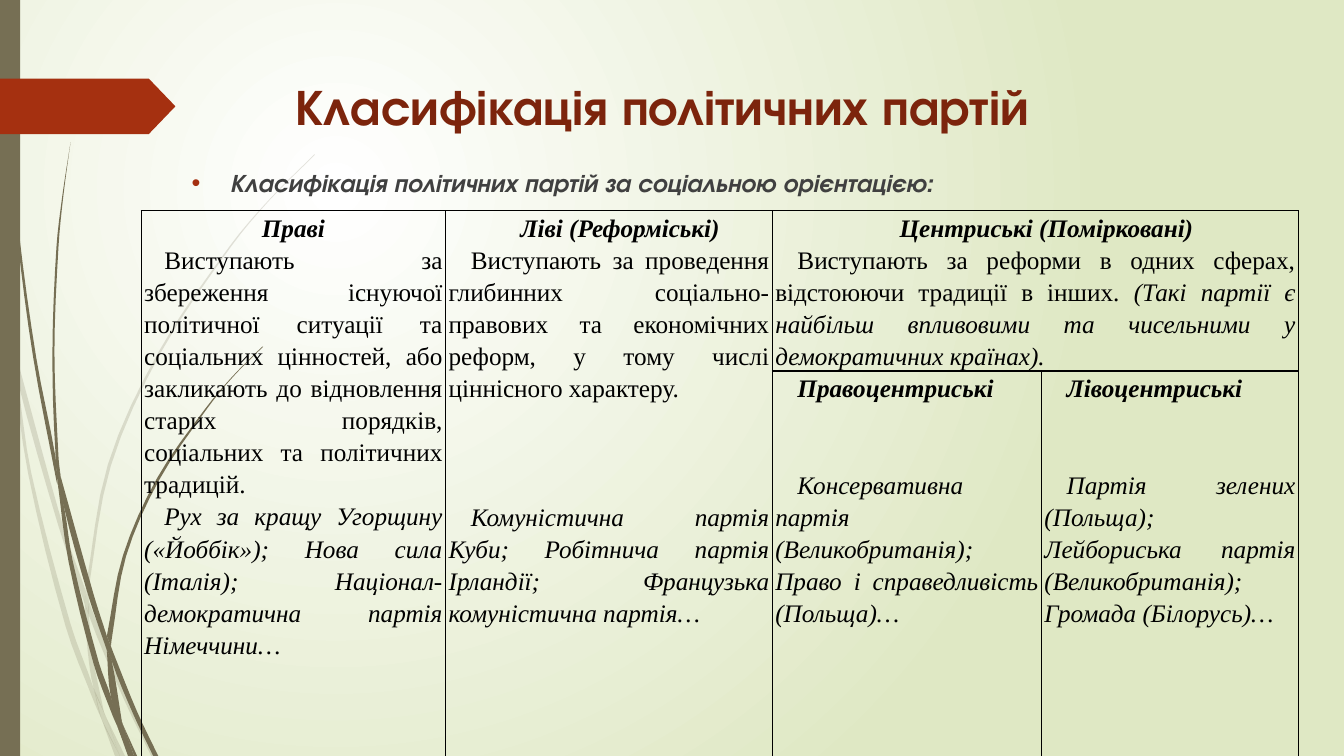
from math import dist
from pptx import Presentation
from pptx.dml.color import RGBColor
from pptx.enum.shapes import MSO_SHAPE as Shape
from pptx.enum.text import MSO_ANCHOR as Anchor, MSO_AUTO_SIZE as AutoSize, PP_ALIGN as Align
from pptx.oxml import parse_xml
from pptx.oxml.ns import nsdecls, qn
from pptx.util import Inches, Pt

COLORS = {"stem": "766F54", "tag": "A53010", "title": "7C240C", "body": "404040",
          "table": "000000", "glow": "FFFFFF", "edge": "DFE8C4"}
HEADING_FONT, TABLE_FONT = "TeX Gyre Adventor", "Times New Roman"

# Content
TITLE = "Класифікація політичних партій"
SUBTITLE = "Класифікація політичних партій за соціальною орієнтацією:"
HEAD = {"bold": True, "italic": True}
PLAIN = {"bold": False, "italic": False}
EXAMPLE = {"bold": False, "italic": True}
LINE = 23  # points in one line of table text

# (row, column, last row, last column): paragraphs of (align, indent, space before, runs)
CELLS = {
    (0, 0, 1, 0): [
        (Align.CENTER, 0, 0, [("Праві", HEAD)]),
        (Align.JUSTIFY, 0.2, 0, [("Виступають за збереження існуючої політичної ситуації та соціальних цінностей, "
                                  "або закликають до відновлення старих порядків, "
                                  "соціальних та політичних традицій.", PLAIN)]),
        (Align.JUSTIFY, 0.2, 0, [("Рух за кращу Угорщину («Йоббік»); Нова сила (Італія); "
                                  "Націонал-демократична партія Німеччини…", EXAMPLE)])],
    (0, 1, 1, 1): [
        (Align.CENTER, 0.22, 0, [("Ліві (Реформіські)", HEAD)]),
        (Align.JUSTIFY, 0.22, 0, [("Виступають за проведення глибинних соціально-правових та "
                                   "економічних реформ, у тому числі ціннісного характеру.", PLAIN)]),
        (Align.JUSTIFY, 0.22, 3 * LINE, [("Комуністична партія Куби; Робітнича партія Ірландії; "
                                          "Французька комуністична партія…", EXAMPLE)])],
    (0, 2, 0, 3): [
        (Align.CENTER, 0.22, 0, [("Центриські (Помірковані)", HEAD)]),
        (Align.JUSTIFY, 0.22, 0, [
            ("Виступають за реформи в одних сферах, відстоюючи традиції в інших. ", PLAIN),
            ("(Такі партії є найбільш впливовими та чисельними у демократичних країнах).", EXAMPLE)])],
    (1, 2, 1, 2): [
        (Align.JUSTIFY, 0.22, 0, [("Правоцентриські", HEAD)]),
        (Align.JUSTIFY, 0.22, 2 * LINE, [("Консервативна партія (Великобританія); "
                                          "Право і справедливість (Польща)…", EXAMPLE)])],
    (1, 3, 1, 3): [
        (Align.JUSTIFY, 0.22, 0, [("Лівоцентриські", HEAD)]),
        (Align.JUSTIFY, 0.22, 2 * LINE, [("Партія зелених (Польща); Лейбориська партія "
                                          "(Великобританія); Громада (Білорусь)…", EXAMPLE)])],
}
COLUMN_WIDTHS = [3.02, 3.24, 2.67, 2.55]
ROW_HEIGHTS = [1.37, 3.47]

# Grass blades: left edge and right edge, both from tip to root
FAINT_BLADES = [
    ([(0, 2.99), (0.1, 3.44), (0.11, 3.5)], [(0, 2.82), (0.09, 3.22), (0.11, 3.5)]),
    ([(0.14, 3.45), (0.17, 3.76), (0.58, 5.22), (0.84, 5.99)], [(0.14, 3.45), (0.62, 5.2), (0.85, 5.86)]),
    ([(0.88, 5.96), (0.88, 6.1), (1.23, 6.94), (1.5, 7.5)], [(0.88, 5.96), (0.92, 6.07), (1.27, 6.92), (1.55, 7.5)]),
    ([(1.05, 7.11), (1.19, 7.5)], [(1.05, 7.11), (1.24, 7.5)]),
    ([(0.11, 3.5), (0.28, 4.7), (0.65, 6.21), (0.92, 6.93), (1.01, 7.14)],
     [(0.11, 3.5), (0.17, 3.76), (0.31, 4.69), (0.7, 6.19), (0.93, 6.83), (0.99, 7.07)]),
    ([(0.84, 5.99), (0.87, 6.46), (0.93, 6.83), (1.05, 7.11)], [(0.84, 5.99), (0.88, 6.1), (0.91, 6.46), (1.03, 7.06)]),
    ([(3.12, 1.53), (2.68, 1.97), (2.28, 2.44), (1.58, 3.48), (1.07, 4.61), (0.85, 5.84)],
     [(3.12, 1.54), (2.68, 1.98), (2.29, 2.45), (1.6, 3.49), (1.1, 4.62), (0.88, 5.84), (0.88, 5.96)]),
    ([(1.01, 7.14), (1.14, 7.5)], [(1.01, 7.14), (1.19, 7.5)]),
    ([(0.85, 5.86), (0.84, 5.99)], [(0.88, 5.96), (0.88, 6.1)]),
    ([(0.93, 6.83), (1.01, 7.14), (1.19, 7.5)], [(0.93, 6.83), (1.05, 7.11), (1.19, 7.5)]),
]
DARK_BLADES = [
    ([(0.03, 0), (0.07, 1.1), (0.17, 2.33), (0.33, 3.55), (0.56, 4.77)],
     [(0.04, 0), (0.08, 1.09), (0.19, 2.32), (0.36, 3.55), (0.55, 4.53), (0.57, 4.81)]),
    ([(0.6, 4.72), (0.64, 5.05), (0.88, 5.92), (1.06, 6.45)], [(0.6, 4.72), (0.93, 5.9), (1.06, 6.31)]),
    ([(1.1, 6.41), (1.11, 6.56), (1.32, 7.08), (1.52, 7.5)], [(1.1, 6.41), (1.13, 6.49), (1.36, 7.06), (1.57, 7.5)]),
    ([(0.57, 4.77), (0.68, 5.57), (0.93, 6.59), (1.11, 7.08), (1.17, 7.22)],
     [(0.57, 4.77), (0.64, 5.05), (0.72, 5.56), (0.98, 6.57), (1.1, 6.91), (1.16, 7.17)]),
    ([(0.7, 1.41), (0.62, 1.93), (0.56, 2.45), (0.52, 3.49), (0.55, 4.49), (0.6, 4.72)],
     [(0.7, 1.41), (0.63, 1.93), (0.58, 2.45), (0.54, 3.49), (0.58, 4.53), (0.6, 4.72)]),
    ([(1.22, 7.19), (1.33, 7.5)], [(1.22, 7.19), (1.36, 7.5)]),
    ([(0.55, 4.49), (0.57, 4.77), (0.64, 5.05)], [(0.55, 4.49), (0.6, 4.72), (0.64, 5.05)]),
    ([(2.6, 3.44), (2.31, 3.73), (2.04, 4.05), (1.56, 4.74), (1.22, 5.51), (1.06, 6.31)],
     [(2.61, 3.44), (2.31, 3.74), (2.05, 4.06), (1.58, 4.76), (1.25, 5.52), (1.11, 6.33), (1.1, 6.41)]),
    ([(1.17, 7.22), (1.27, 7.5)], [(1.17, 7.22), (1.31, 7.5)]),
    ([(1.06, 6.45), (1.1, 6.91), (1.22, 7.19)], [(1.06, 6.45), (1.11, 6.56), (1.21, 7.16)]),
    ([(1.06, 6.31), (1.06, 6.45)], [(1.1, 6.41), (1.11, 6.56)]),
    ([(1.1, 6.91), (1.17, 7.22), (1.3, 7.5)], [(1.1, 6.91), (1.22, 7.19), (1.33, 7.5)]),
]


def smooth(points, steps=4):
    """Trace a soft curve through the points."""
    ends = [points[0], *points, points[-1]]
    tangents = [[(b - a) / dist(p, q) for a, b in zip(p, q)] for p, q in zip(ends, ends[2:])]
    curve = [points[0]]
    for start, end, leave, arrive in zip(points, points[1:], tangents, tangents[1:]):
        for t in (step / steps for step in range(1, steps + 1)):
            curve.append([a + (b - a) * (3 - 2 * t) * t**2
                          + dist(start, end) * t * (1 - t) * ((1 - t) * u - t * v)
                          for a, b, u, v in zip(start, end, leave, arrive)])
    return curve


def paint(shape, color):
    shape.shadow.inherit = False
    shape.fill.solid()
    shape.fill.fore_color.rgb = RGBColor.from_string(COLORS[color])
    shape.line.fill.background()


def add_blade(shapes, left, right, alpha):
    outline = [(Inches(x), Inches(y)) for x, y in smooth(left) + smooth(right)[::-1]]
    builder = shapes.build_freeform(*outline[0])
    builder.add_line_segments(outline[1:], close=True)
    blade = builder.convert_to_shape()
    paint(blade, "stem")
    color = blade._element.spPr.find(qn("a:solidFill"))[0]
    color.append(parse_xml(f'<a:alpha {nsdecls("a")} val="{alpha * 1000}"/>'))


def add_run(paragraph, text, color, **formats):
    run = paragraph.add_run()
    run.text = text
    for name, value in formats.items():
        setattr(run.font, name, value)
    run.font.color.rgb = RGBColor.from_string(COLORS[color])


def place(placeholder, **box):
    for name, value in box.items():
        setattr(placeholder, name, Inches(value))
    frame = placeholder.text_frame
    frame.auto_size, frame.vertical_anchor = AutoSize.NONE, Anchor.TOP
    paragraph = frame.paragraphs[0]
    paragraph.alignment, paragraph.space_before = Align.LEFT, Pt(0)
    return paragraph


presentation = Presentation()
presentation.slide_width, presentation.slide_height = Inches(13.33), Inches(7.5)
slide = presentation.slides.add_slide(presentation.slide_layouts[1])
shapes = slide.shapes
title, body = slide.placeholders

# Background glow
slide.background.fill.solid()
background = slide._element.find(".//" + qn("p:bgPr"))
stops = "".join(f'<a:gs pos="{position}"><a:srgbClr val="{COLORS[name]}"/></a:gs>'
                for position, name in ((0, "glow"), (100000, "edge")))
background.replace(background[0], parse_xml(
    f'<a:gradFill {nsdecls("a")} rotWithShape="1"><a:gsLst>{stops}</a:gsLst><a:path path="circle">'
    '<a:fillToRect l="50000" t="50000" r="100000" b="100000"/></a:path></a:gradFill>'))

# Grass, side bar and tag
for blades, alpha in ((FAINT_BLADES, 20), (DARK_BLADES, 100)):
    for left, right in blades:
        add_blade(shapes, left, right, alpha)
paint(shapes.add_shape(Shape.RECTANGLE, 0, 0, Inches(0.2), Inches(7.5)), "stem")
tag = shapes.add_shape(Shape.PENTAGON, 0, Inches(0.78), Inches(1.74), Inches(0.55))
tag.adjustments[0] = 0.48
paint(tag, "tag")

# Title and subtitle, in front of the grass
shapes._spTree.extend([title._element, body._element])
add_run(place(title, left=2.83, top=0.69, width=9.75, height=1.4), TITLE, "title",
        name=HEADING_FONT, size=Pt(36), bold=True)
subtitle = place(body, left=1.8, top=1.61, width=11.17, height=5.55)
properties = subtitle._p.get_or_add_pPr()
properties.set("marL", str(Inches(0.38)))
properties.set("indent", str(-Inches(0.38)))
for bullet in (f'<a:buClr {nsdecls("a")}><a:srgbClr val="{COLORS["tag"]}"/></a:buClr>',
               f'<a:buFont {nsdecls("a")} typeface="Arial"/>', f'<a:buChar {nsdecls("a")} char="•"/>'):
    properties.append(parse_xml(bullet))
add_run(subtitle, SUBTITLE, "body", name=HEADING_FONT, size=Pt(18), **HEAD)

# Table of parties
table = shapes.add_table(len(ROW_HEIGHTS), len(COLUMN_WIDTHS), Inches(1.4), Inches(2.09),
                         Inches(sum(COLUMN_WIDTHS)), Inches(sum(ROW_HEIGHTS))).table
table.first_row = table.horz_banding = False
for column, width in zip(table.columns, COLUMN_WIDTHS):
    column.width = Inches(width)
for row, height in zip(table.rows, ROW_HEIGHTS):
    row.height = Inches(height)
for cell in table.iter_cells():
    cell.margin_left = cell.margin_right = Inches(0.03)
    cell.margin_top = cell.margin_bottom = 0
    for side in ("lnL", "lnR", "lnT", "lnB"):
        cell._tc.get_or_add_tcPr().append(parse_xml(
            f'<a:{side} {nsdecls("a")} w="{Pt(1)}"><a:solidFill>'
            f'<a:srgbClr val="{COLORS["table"]}"/></a:solidFill></a:{side}>'))
    cell.fill.background()
for (row, column, *last), paragraphs in CELLS.items():
    cell = table.cell(row, column)
    if [row, column] != last:
        cell.merge(table.cell(*last))
    for number, (align, indent, space, runs) in enumerate(paragraphs):
        paragraph = cell.text_frame.add_paragraph() if number else cell.text_frame.paragraphs[0]
        paragraph.alignment, paragraph.line_spacing, paragraph.space_before = align, 1.15, Pt(space)
        paragraph._p.get_or_add_pPr().set("indent", str(Inches(indent)))
        for text, style in runs:
            add_run(paragraph, text, "table", name=TABLE_FONT, size=Pt(18), **style)

presentation.save("out.pptx")
